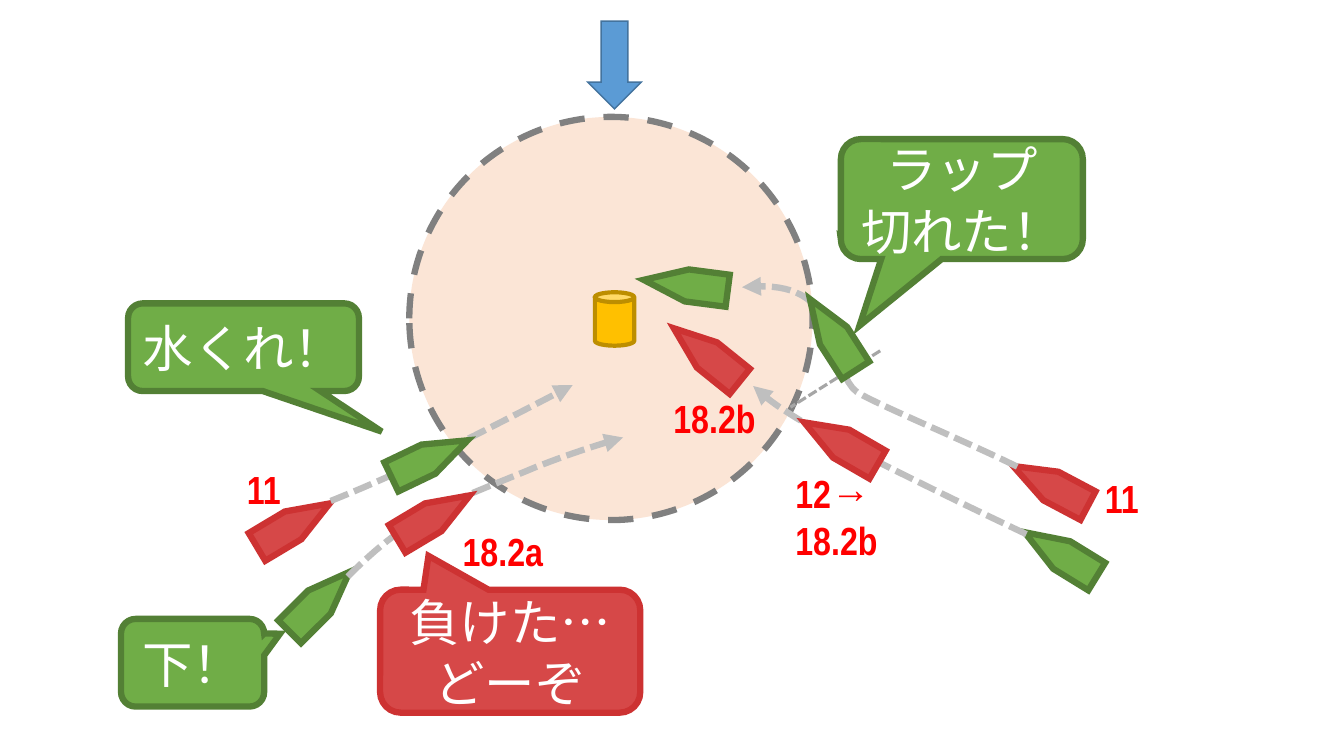
from lxml import etree
from pptx import Presentation
from pptx.dml.color import RGBColor
from pptx.enum import dml, shapes, text
from pptx.oxml import ns
from pptx.util import Inches, Pt

GREEN, GREEN_EDGE = RGBColor(0x70, 0xAD, 0x47), RGBColor(0x53, 0x80, 0x35)
RED, RED_EDGE = RGBColor(0xD6, 0x48, 0x48), RGBColor(0xCD, 0x32, 0x32)
PEACH, ZONE_EDGE = RGBColor(0xFB, 0xE5, 0xD6), RGBColor(0x80, 0x80, 0x80)
BLUE, BLUE_EDGE = RGBColor(0x5B, 0x9B, 0xD5), RGBColor(0x43, 0x73, 0x9E)
GOLD, GOLD_EDGE = RGBColor(0xFF, 0xC0, 0x00), RGBColor(0xBD, 0x8E, 0x00)
TRACK_GREY, OVERLAP_GREY = RGBColor(0xBF, 0xBF, 0xBF), RGBColor(0xA6, 0xA6, 0xA6)
WHITE, RULE_RED = RGBColor(0xFF, 0xFF, 0xFF), RGBColor(0xFF, 0x00, 0x00)
GREEN_TEAM, RED_TEAM = (GREEN, GREEN_EDGE), (RED, RED_EDGE)

# Boats: left, top, heading, bow length, team
BOAT_SIZE = (0.84, 0.32)
STARTING_BOATS = [
    (2.75, 5.81, 315, 1.321, GREEN_TEAM),
    (2.49, 5.05, 329.1, 1.321, RED_TEAM),
    (10.1, 5.34, 211.6, 1.349, GREEN_TEAM),
    (10, 4.66, 207.9, 1.321, RED_TEAM),
]
ZONE_BOATS = [
    (3.88, 4.97, 329.1, 1.321, RED_TEAM),
    (3.84, 4.39, 334.4, 1.349, GREEN_TEAM),
    (6.38, 2.67, 187.4, 1.349, GREEN_TEAM),
    (6.59, 3.36, 218.8, 1.321, RED_TEAM),
    (7.84, 3.16, 237.3, 1.349, GREEN_TEAM),
    (7.92, 4.24, 210, 1.321, RED_TEAM),
]

# Tracks: a start point, then two control points and an end for each curve
TRACKS = [
    [(3.28, 4.97), (3.58, 4.85), (3.88, 4.72), (4.28, 4.53),
     (4.68, 4.34), (5.18, 4.08), (5.68, 3.82)],
    [(3.45, 5.72), (3.66, 5.51), (3.88, 5.31), (4.19, 5.13),
     (4.5, 4.95), (4.97, 4.78), (5.3, 4.64),
     (5.63, 4.51), (5.9, 4.42), (6.18, 4.34)],
    [(10.09, 4.63), (9.54, 4.36), (8.69, 4.01), (8.5, 3.89),
     (8.32, 3.77), (8.24, 3.17), (8.05, 3),
     (7.86, 2.83), (7.6, 2.83), (7.36, 2.85)],
    [(10.18, 5.3), (9.4, 4.93), (8.63, 4.55), (8.18, 4.31),
     (7.73, 4.06), (7.6, 3.95), (7.47, 3.83)],
]
STEPS = 12

# Hails: words, box, pointer, team
HAILS = [
    ("下！", (1.2, 6.14, 1.42, 0.87), (0.611, -0.331), GREEN_TEAM),
    ("水くれ！", (1.27, 3.01, 2.29, 0.87), (0.599, 0.962), GREEN_TEAM),
    ("負けた…\nどーぞ", (3.77, 5.85, 2.58, 1.22), (-0.314, -0.775), RED_TEAM),
    ("ラップ\n切れた！", (8.34, 1.38, 2.4, 1.19), (-0.423, 1.056), GREEN_TEAM),
]

RULES = [
    ("11", (2.35, 4.57, 0.54, 0.57)),
    ("18.2a", (4.49, 5.18, 1.19, 0.57)),
    ("12→\n18.2b", (7.79, 4.61, 1.91, 1.04)),
    ("11", (10.86, 4.66, 0.65, 0.57)),
    ("18.2b", (6.58, 3.86, 1.09, 0.57)),
]

deck = Presentation()
deck.slide_width, deck.slide_height = Inches(13.33), Inches(7.5)
slide = deck.slides.add_slide(deck.slide_layouts[6])


def set_line(item, color, width, dash=None):
    item.line.color.rgb = color
    item.line.width = Pt(width)
    if dash:
        item.line.dash_style = dash


def add_preset(kind, box, colors, width, dash=None):
    item = slide.shapes.add_shape(kind, *map(Inches, box))
    item.shadow.inherit = False
    item.fill.solid()
    item.fill.fore_color.rgb = colors[0]
    set_line(item, colors[1], width, dash)
    etree.SubElement(item.line._get_or_add_ln(), ns.qn("a:miter"), lim="800000")
    return item


def add_boats(boats):
    for left, top, heading, bow, team in boats:
        boat = add_preset(shapes.MSO_SHAPE.PENTAGON, (left, top, *BOAT_SIZE), team, 4.5)
        boat.adjustments[0] = bow
        boat.rotation = heading


def curve_points(points):
    for i in range(0, len(points) - 1, 3):
        for step in range(1, STEPS + 1):
            t = step / STEPS
            weights = ((1 - t) ** 3, 3 * t * (1 - t) ** 2, 3 * t * t * (1 - t), t ** 3)
            yield tuple(Inches(sum(w * p[axis] for w, p in zip(weights, points[i:i + 4])))
                        for axis in (0, 1))


def write(item, words, size, font_name, color, bold=False, align=None, spacing=None):
    item.text_frame.text = words
    for paragraph in item.text_frame.paragraphs:
        paragraph.alignment = align
        paragraph.line_spacing = spacing
        for run in paragraph.runs:
            run.font.size, run.font.bold = Pt(size), bold
            run.font.name = font_name
            run.font.color.rgb = color
            etree.SubElement(run.font._element, ns.qn("a:ea"), typeface=font_name)


# Zone, wind and mark
add_preset(shapes.MSO_SHAPE.OVAL, (4.06, 1.16, 4, 4), (PEACH, ZONE_EDGE), 4.5,
           dml.MSO_LINE.DASH)
add_preset(shapes.MSO_SHAPE.DOWN_ARROW, (5.83, 0.21, 0.53, 0.87), (BLUE, BLUE_EDGE), 1)
add_preset(shapes.MSO_SHAPE.CAN, (5.9, 2.9, 0.39, 0.53), (GOLD, GOLD_EDGE), 3)

# Boats, overlap line and tracks
add_boats(STARTING_BOATS)
overlap = slide.shapes.add_connector(shapes.MSO_CONNECTOR.STRAIGHT,
                                     *map(Inches, (8.73, 3.48, 7.84, 4.04)))
set_line(overlap, OVERLAP_GREY, 2.25, dml.MSO_LINE.SQUARE_DOT)
etree.SubElement(overlap._element.spPr, ns.qn("a:effectLst"))
for points in TRACKS:
    builder = slide.shapes.build_freeform(*map(Inches, points[0]))
    builder.add_line_segments(curve_points(points), close=False)
    track = builder.convert_to_shape()
    track.shadow.inherit = False
    track.fill.background()
    set_line(track, TRACK_GREY, 4.5, dml.MSO_LINE.SQUARE_DOT)
    etree.SubElement(track.line._get_or_add_ln(), ns.qn("a:tailEnd"), type="triangle")
add_boats(ZONE_BOATS)

# Hails
for words, box, pointer, team in HAILS:
    hail = add_preset(shapes.MSO_SHAPE.ROUNDED_RECTANGULAR_CALLOUT, box, team, 4.5)
    for i, value in enumerate((*pointer, 0.167)):
        hail.adjustments[i] = value
    hail.text_frame.vertical_anchor = text.MSO_ANCHOR.MIDDLE
    write(hail, words, 36, "Noto Sans CJK JP", WHITE,
          align=text.PP_ALIGN.CENTER, spacing=Pt(44))

# Rule numbers
for words, box in RULES:
    rule = slide.shapes.add_textbox(*map(Inches, box))
    rule.text_frame.word_wrap = True
    rule.text_frame.auto_size = text.MSO_AUTO_SIZE.SHAPE_TO_FIT_TEXT
    write(rule, words, 28, "Arial Narrow", RULE_RED, bold=True)

deck.save("out.pptx")
